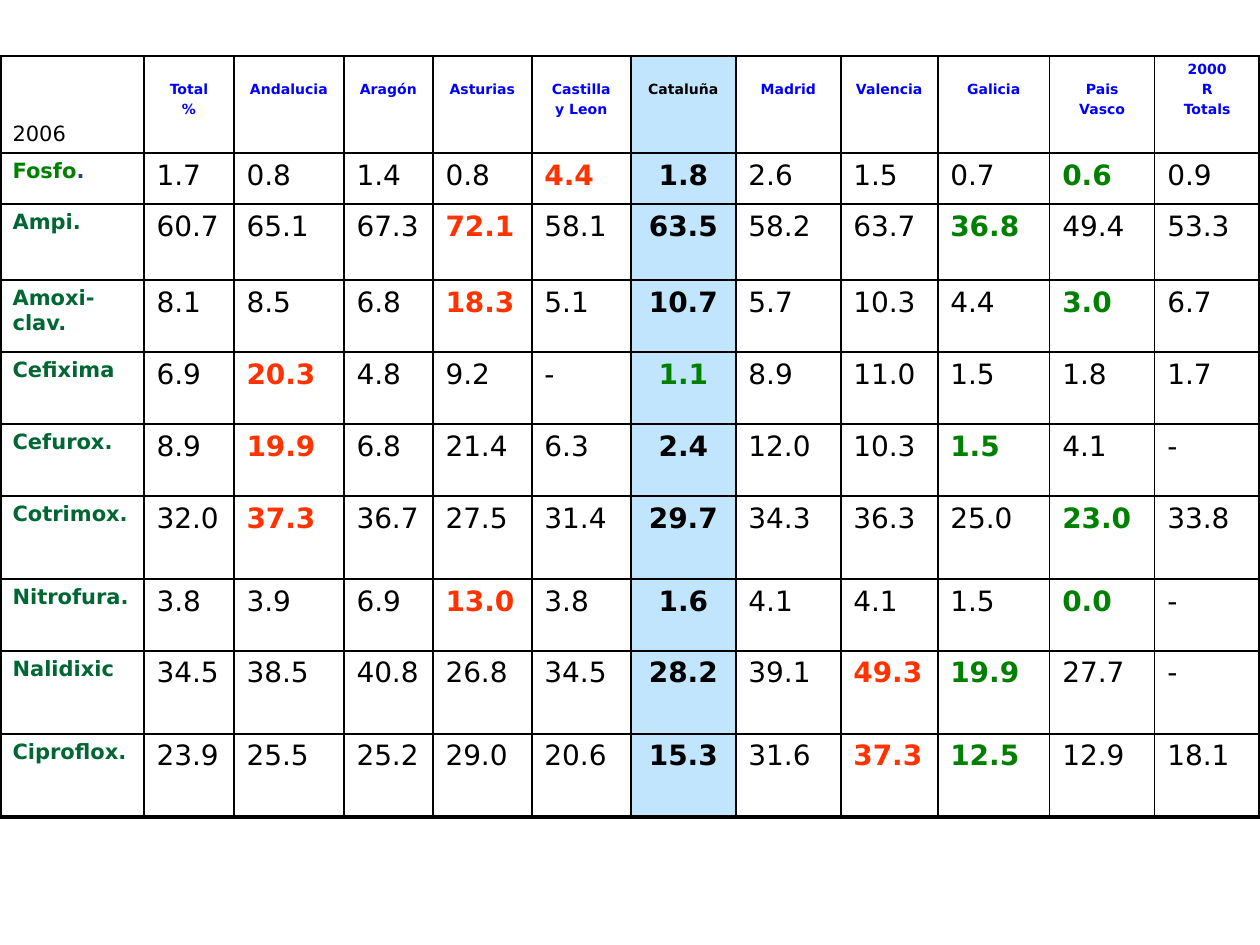
from dataclasses import dataclass

from lxml import etree
from pptx import Presentation
from pptx import util as u
from pptx.dml.color import RGBColor
from pptx.enum import text
from pptx.oxml import ns

EMU_PER_PX = 914400 / 126
FONT = "DejaVu Sans"
COLORS = {
    "ink": "000000", "region": "0000FF", "drug": "006633", "first drug": "008000",
    "full stop": "1F497D", "high": "FF3300", "low": "008000", "highlight": "85CCFD",
}
HIGHLIGHTED = "Cataluña"


@dataclass(frozen=True)
class Column:
    title: str
    width: int
    margin_top: int = 26


@dataclass(frozen=True)
class Resistance:
    drug: str
    height: int
    values: str
    high: str
    low: str


HEADER_HEIGHT = 96
COLUMNS = [
    Column("2006", 144, 66), Column("Total\n%", 90), Column("Andalucia", 110),
    Column("Aragón", 89), Column("Asturias", 99), Column("Castilla\ny Leon", 99),
    Column(HIGHLIGHTED, 105), Column("Madrid", 105), Column("Valencia", 97),
    Column("Galicia", 112), Column("Pais\nVasco", 105), Column("2000\nR\nTotals", 105, 6),
]
ROWS = [
    Resistance("Fosfo.", 51, "1.7 0.8 1.4 0.8 4.4 1.8 2.6 1.5 0.7 0.6 0.9",
               "Castilla\ny Leon", "Pais\nVasco"),
    Resistance("Ampi.", 76, "60.7 65.1 67.3 72.1 58.1 63.5 58.2 63.7 36.8 49.4 53.3",
               "Asturias", "Galicia"),
    Resistance("Amoxi-clav.", 72, "8.1 8.5 6.8 18.3 5.1 10.7 5.7 10.3 4.4 3.0 6.7",
               "Asturias", "Pais\nVasco"),
    Resistance("Cefixima", 72, "6.9 20.3 4.8 9.2 - 1.1 8.9 11.0 1.5 1.8 1.7",
               "Andalucia", HIGHLIGHTED),
    Resistance("Cefurox.", 72, "8.9 19.9 6.8 21.4 6.3 2.4 12.0 10.3 1.5 4.1 -",
               "Andalucia", "Galicia"),
    Resistance("Cotrimox.", 83, "32.0 37.3 36.7 27.5 31.4 29.7 34.3 36.3 25.0 23.0 33.8",
               "Andalucia", "Pais\nVasco"),
    Resistance("Nitrofura.", 72, "3.8 3.9 6.9 13.0 3.8 1.6 4.1 4.1 1.5 0.0 -",
               "Asturias", "Pais\nVasco"),
    Resistance("Nalidixic", 83, "34.5 38.5 40.8 26.8 34.5 28.2 39.1 49.3 19.9 27.7 -",
               "Valencia", "Galicia"),
    Resistance("Ciproflox.", 83, "23.9 25.5 25.2 29.0 20.6 15.3 31.6 37.3 12.5 12.9 18.1",
               "Valencia", "Galicia"),
]


def px(length: int) -> u.Emu:
    return u.Emu(round(length * EMU_PER_PX))


def add_run(paragraph, words: str, color: str, size: int, bold: bool) -> None:
    run = paragraph.add_run()
    run.text = words
    for name, value in {"name": FONT, "size": u.Pt(size), "bold": bold}.items():
        setattr(run.font, name, value)
    run.font.color.rgb = RGBColor.from_string(COLORS[color])


def write_cell(cell, words: str, color: str, size: int, bold: bool,
               centered: bool = False) -> None:
    frame = cell.text_frame
    for index, line in enumerate(words.split("\n")):
        paragraph = frame.add_paragraph() if index else frame.paragraphs[0]
        if index:
            paragraph.space_before = u.Pt(2)
        paragraph.alignment = text.PP_ALIGN.CENTER if centered else text.PP_ALIGN.LEFT
        add_run(paragraph, line, color, size, bold)


def fill_cell(cell, highlighted: bool) -> None:
    if not highlighted:
        cell.fill.background()
        return
    cell.fill.solid()
    cell.fill.fore_color.rgb = RGBColor.from_string(COLORS["highlight"])
    color = cell._tc.tcPr.find(".//" + ns.qn("a:srgbClr"))
    etree.SubElement(color, ns.qn("a:alpha"), val="50000")


def draw_borders(cell, widths: dict[str, float]) -> None:
    properties = cell._tc.get_or_add_tcPr()
    for position, (side, width) in enumerate(widths.items()):
        line = etree.Element(ns.qn(f"a:ln{side}"), w=str(u.Pt(width)))
        solid = etree.SubElement(line, ns.qn("a:solidFill"))
        etree.SubElement(solid, ns.qn("a:srgbClr"), val=COLORS["ink"])
        properties.insert(position, line)


def write_header(table) -> None:
    for index, column in enumerate(COLUMNS):
        cell = table.cell(0, index)
        cell.margin_top = px(column.margin_top)
        if index == 0:
            write_cell(cell, column.title, "ink", 12, False)
        else:
            color = "ink" if column.title == HIGHLIGHTED else "region"
            write_cell(cell, column.title, color, 8, True, centered=True)


def write_row(table, index: int, row: Resistance) -> None:
    label = table.cell(index, 0)
    if index == 1:
        write_cell(label, row.drug.rstrip("."), "first drug", 12, True)
        add_run(label.text_frame.paragraphs[0], ".", "full stop", 12, True)
    else:
        write_cell(label, row.drug, "drug", 12, True)
    marks = {row.high: "high", row.low: "low"}
    for number, (column, value) in enumerate(zip(COLUMNS[1:], row.values.split()), 1):
        highlighted = column.title == HIGHLIGHTED
        write_cell(table.cell(index, number), value, marks.get(column.title, "ink"), 16,
                   highlighted or column.title in marks, centered=highlighted)


def main() -> None:
    presentation = Presentation()
    presentation.slide_width, presentation.slide_height = px(1260), px(945)
    slide = presentation.slides.add_slide(presentation.slide_layouts[6])

    # Table grid
    heights = [HEADER_HEIGHT] + [row.height for row in ROWS]
    widths = [column.width for column in COLUMNS]
    shape = slide.shapes.add_table(len(heights), len(widths), px(0), px(56),
                                   px(sum(widths)), px(sum(heights)))
    table = shape.table
    table.first_row = table.horz_banding = False
    for table_row, height in zip(table.rows, heights):
        table_row.height = px(height)
    for table_column, width in zip(table.columns, widths):
        table_column.width = px(width)

    # Wording
    write_header(table)
    for index, row in enumerate(ROWS, 1):
        write_row(table, index, row)

    # Fills and borders, heavier at the left, right and bottom edges
    for r in range(len(heights)):
        for c, column in enumerate(COLUMNS):
            cell = table.cell(r, c)
            fill_cell(cell, column.title == HIGHLIGHTED)
            draw_borders(cell, {
                "L": 2.25 if c == 0 else 1,
                "R": 2.25 if c == len(widths) - 1 else 1,
                "T": 1,
                "B": 2.25 if r == len(heights) - 1 else 1,
            })

    presentation.save("out.pptx")


if __name__ == "__main__":
    main()
